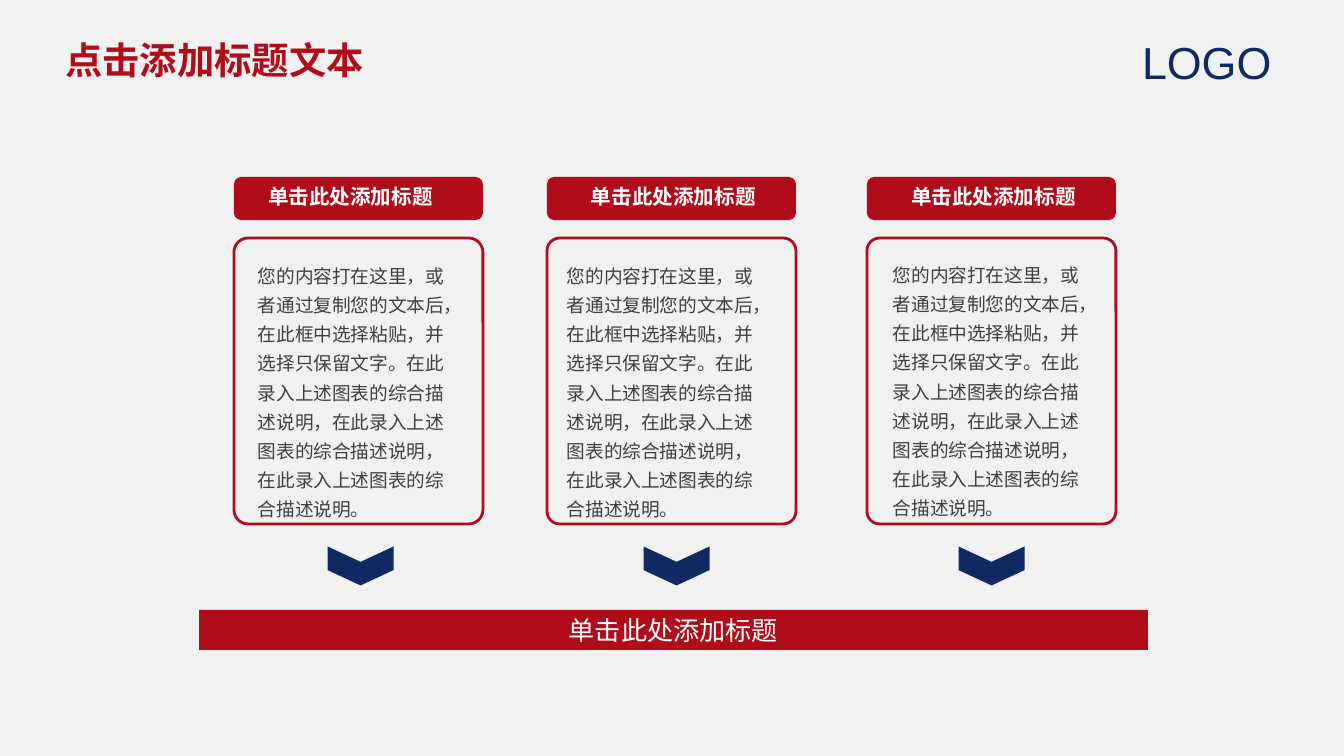
from dataclasses import dataclass
from typing import Optional

from lxml import etree
from pptx import Presentation
from pptx.dml.color import RGBColor
from pptx.enum.shapes import MSO_SHAPE
from pptx.enum.text import MSO_ANCHOR, MSO_AUTO_SIZE, PP_ALIGN
from pptx.oxml.ns import qn
from pptx.util import Emu, Pt

RECTANGLE = MSO_SHAPE.RECTANGLE
ROUNDED = MSO_SHAPE.ROUNDED_RECTANGLE
CHEVRON = MSO_SHAPE.CHEVRON
LEFT, CENTER = PP_ALIGN.LEFT, PP_ALIGN.CENTER
TOP, MIDDLE = MSO_ANCHOR.TOP, MSO_ANCHOR.MIDDLE
NO_FIT = MSO_AUTO_SIZE.NONE

SCALE = 9144000 / 1344
COLORS = {"paper": "F1F1F1", "red": "B10C1A", "navy": "0F2963",
          "text": "404040", "white": "FFFFFF"}
CJK = "Noto Sans CJK SC"
HEADING = "单击此处添加标题"
REPEATED = "在此录入上述图表的综合描述说明"
BODY = ("您的内容打在这里，或者通过复制您的文本后，在此框中选择粘贴，并选择只保留文字。"
        + "，".join([REPEATED] * 3) + "。")


@dataclass(frozen=True)
class Area:
    left: int
    top: int
    width: int
    height: int

    def lengths(self) -> list[Emu]:
        return [px(n) for n in (self.left, self.top, self.width, self.height)]


@dataclass(frozen=True)
class TextStyle:
    size: int
    color: str
    font: str = CJK
    bold: bool = False
    align: PP_ALIGN = LEFT
    anchor: MSO_ANCHOR = TOP
    spacing: float = 1.0
    wrap: bool = True
    inset_x: int = 9
    inset_y: int = 4


@dataclass(frozen=True)
class Column:
    card_left: int
    label_left: int
    body_left: int
    body_top: int
    arrow_left: int
    corner: float


COLUMNS = [
    Column(234, 239, 249, 254, 341, 0.057),
    Column(547, 562, 558, 254, 657, 0.051),
    Column(867, 882, 884, 253, 972, 0.051),
]
TITLE = TextStyle(20, "red", bold=True, wrap=False, inset_x=13, inset_y=7)
LOGO = TextStyle(24, "navy", font="Arial", wrap=False, inset_x=13, inset_y=7)
LABEL = TextStyle(11, "white", bold=True, align=CENTER)
CONTENT = TextStyle(10, "text", spacing=1.3)
BANNER = TextStyle(14, "white", align=CENTER, anchor=MIDDLE)


def px(length: int) -> Emu:
    return Emu(round(length * SCALE))


def rgb(name: str) -> RGBColor:
    return RGBColor.from_string(COLORS[name])


def apply(target, values: dict) -> None:
    for name, value in values.items():
        setattr(target, name, value)


def write(box, text: str, style: TextStyle) -> None:
    frame = box.text_frame
    apply(frame, {
        "auto_size": NO_FIT, "word_wrap": style.wrap, "vertical_anchor": style.anchor,
        "margin_left": px(style.inset_x), "margin_right": px(style.inset_x),
        "margin_top": px(style.inset_y), "margin_bottom": px(style.inset_y)})
    para = frame.paragraphs[0]
    apply(para, {"alignment": style.align, "line_spacing": style.spacing})
    span = para.add_run()
    span.text = text
    apply(span.font, {"name": style.font, "size": Pt(style.size), "bold": style.bold})
    span.font.color.rgb = rgb(style.color)
    east_asian = etree.Element(qn("a:ea"), typeface=style.font)
    span.font._element.find(qn("a:latin")).addnext(east_asian)


def add_text(page, area: Area, text: str, style: TextStyle) -> None:
    write(page.shapes.add_textbox(*area.lengths()), text, style)


def add_block(page, kind: MSO_SHAPE, area: Area, fill: Optional[str] = None,
              line: Optional[str] = None, adjust: Optional[float] = None):
    block = page.shapes.add_shape(kind, *area.lengths())
    block.shadow.inherit = False
    if fill:
        block.fill.solid()
        block.fill.fore_color.rgb = rgb(fill)
    else:
        block.fill.background()
    if line:
        block.line.color.rgb = rgb(line)
        block.line.width = Pt(1.5)
    else:
        block.line.fill.background()
    if adjust is not None:
        block.adjustments[0] = adjust
    return block


def add_column(page, column: Column) -> None:
    add_block(page, ROUNDED, Area(column.card_left, 238, 249, 286),
              line="red", adjust=column.corner)
    add_block(page, ROUNDED, Area(column.card_left, 177, 249, 43), fill="red")
    add_text(page, Area(column.label_left, 180, 223, 34), HEADING, LABEL)
    add_text(page, Area(column.body_left, column.body_top, 214, 273), BODY, CONTENT)
    arrow = add_block(page, CHEVRON, Area(column.arrow_left, 533, 39, 66),
                      fill="navy", adjust=0.394)
    arrow.rotation = 90


def main() -> None:
    deck = Presentation()
    apply(deck, {"slide_width": px(1344), "slide_height": px(756)})
    page = deck.slides.add_slide(deck.slide_layouts[5])
    page.background.fill.solid()
    page.background.fill.fore_color.rgb = rgb("paper")

    title = page.shapes.title
    apply(title, dict(zip(("left", "top", "width", "height"),
                          Area(52, 30, 329, 59).lengths())))
    write(title, "点击添加标题文本", TITLE)
    add_text(page, Area(1129, 28, 168, 67), "LOGO", LOGO)

    for column in COLUMNS:
        add_column(page, column)

    banner = add_block(page, RECTANGLE, Area(199, 610, 949, 40), fill="red")
    write(banner, HEADING, BANNER)
    deck.save("out.pptx")


if __name__ == "__main__":
    main()
